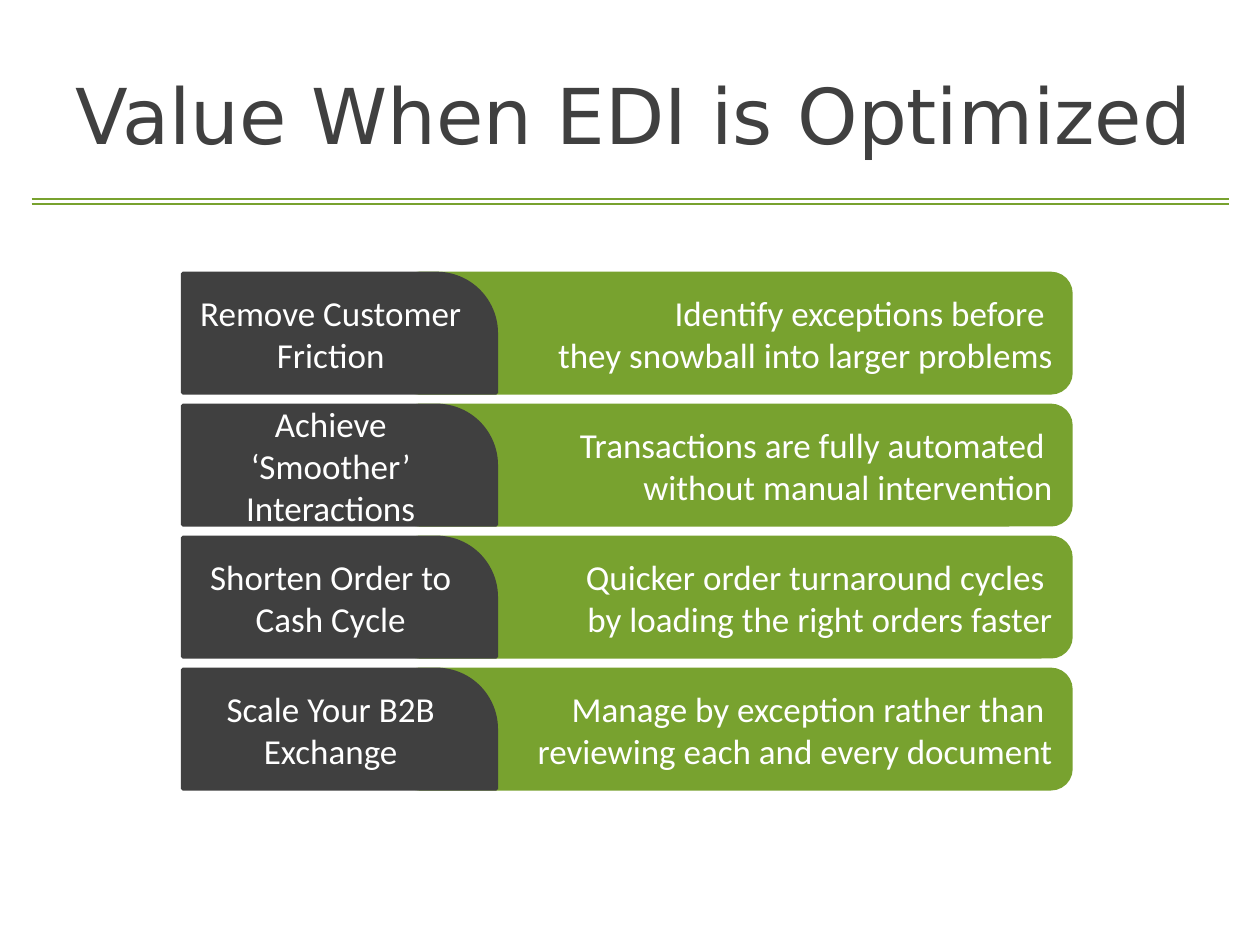
import pptx
import pptx.dml.color
import pptx.enum.shapes
import pptx.enum.text
import pptx.util
from lxml import etree

Inches, Pt = pptx.util.Inches, pptx.util.Pt
SHAPE = pptx.enum.shapes.MSO_SHAPE
ALIGN = pptx.enum.text.PP_ALIGN
ANCHOR = pptx.enum.text.MSO_ANCHOR

GREEN = pptx.dml.color.RGBColor(0x78, 0xA2, 0x2F)
CHARCOAL = pptx.dml.color.RGBColor(0x40, 0x40, 0x40)
WHITE = pptx.dml.color.RGBColor(0xFF, 0xFF, 0xFF)

BENEFITS = [
    ("Remove Customer Friction",
     ["Identify exceptions before ", "they snowball into larger problems"]),
    ("Achieve ‘Smoother’ Interactions",
     ["Transactions are fully automated ", "without manual intervention"]),
    ("Shorten Order to Cash Cycle",
     ["Quicker order turnaround cycles ", "by loading the right orders faster"]),
    ("Scale Your B2B Exchange",
     ["Manage by exception rather than ", "reviewing each and every document"]),
]


def write(shape, lines, font_name, size, color, align):
    """Fill a shape with one paragraph per line, centred vertically."""
    frame = shape.text_frame
    frame.word_wrap = True
    frame.vertical_anchor = ANCHOR.MIDDLE
    frame.text = "\n".join(lines)
    for paragraph in frame.paragraphs:
        paragraph.alignment = align
        paragraph.font.name = font_name
        paragraph.font.size = Pt(size)
        paragraph.font.color.rgb = color


def add_panel(slide, kind, box, color, lines, align):
    panel = slide.shapes.add_shape(kind, *map(Inches, box))
    panel.shadow.inherit = False
    panel.fill.solid()
    panel.fill.fore_color.rgb = color
    panel.line.color.rgb = color
    panel.line.width = Pt(2)
    write(panel, lines, "Calibri", 20, WHITE, align)
    return panel


def add_header(slide, left, top, width, height):
    """Title with a double rule along the bottom of the box."""
    title = slide.shapes.add_textbox(
        Inches(left + 0.25), Inches(top), Inches(width - 0.25), Inches(1.25))
    write(title, ["Value When EDI is Optimized"], "DejaVu Sans", 44,
          CHARCOAL, ALIGN.LEFT)
    for y in (top + height - 0.04, top + height):
        rule = slide.shapes.add_connector(
            pptx.enum.shapes.MSO_CONNECTOR.STRAIGHT,
            Inches(left), Inches(y), Inches(left + width), Inches(y))
        rule.line.color.rgb = GREEN
        rule.line.width = Pt(1.5)
        etree.SubElement(rule._element.spPr, pptx.oxml.ns.qn("a:effectLst"))


def add_benefits(slide, left, top, width, height):
    """Rows of a dark label tab overlapping a green description bar."""
    gap = 0.1
    row_height = (height + gap) / len(BENEFITS) - gap
    label_width = width * 0.353
    bar_offset = width * 0.244
    for row, (label, description) in enumerate(BENEFITS):
        y = top + row * (row_height + gap)
        add_panel(slide, SHAPE.ROUNDED_RECTANGLE,
                  (left + bar_offset, y, width - bar_offset, row_height),
                  GREEN, description, ALIGN.RIGHT)
        tab = add_panel(slide, SHAPE.ROUND_1_RECTANGLE,
                        (left, y, label_width, row_height),
                        CHARCOAL, [label], ALIGN.CENTER)
        tab.adjustments[0] = 0.5


def main():
    deck = pptx.Presentation()
    deck.slide_width, deck.slide_height = Inches(10), Inches(7.5)
    slide = deck.slides.add_slide(deck.slide_layouts[6])
    add_header(slide, 0.25, 0.28, 9.5, 1.34)
    add_benefits(slide, 1.45, 2.17, 7.05, 4.09)
    deck.save("out.pptx")


if __name__ == "__main__":
    main()
